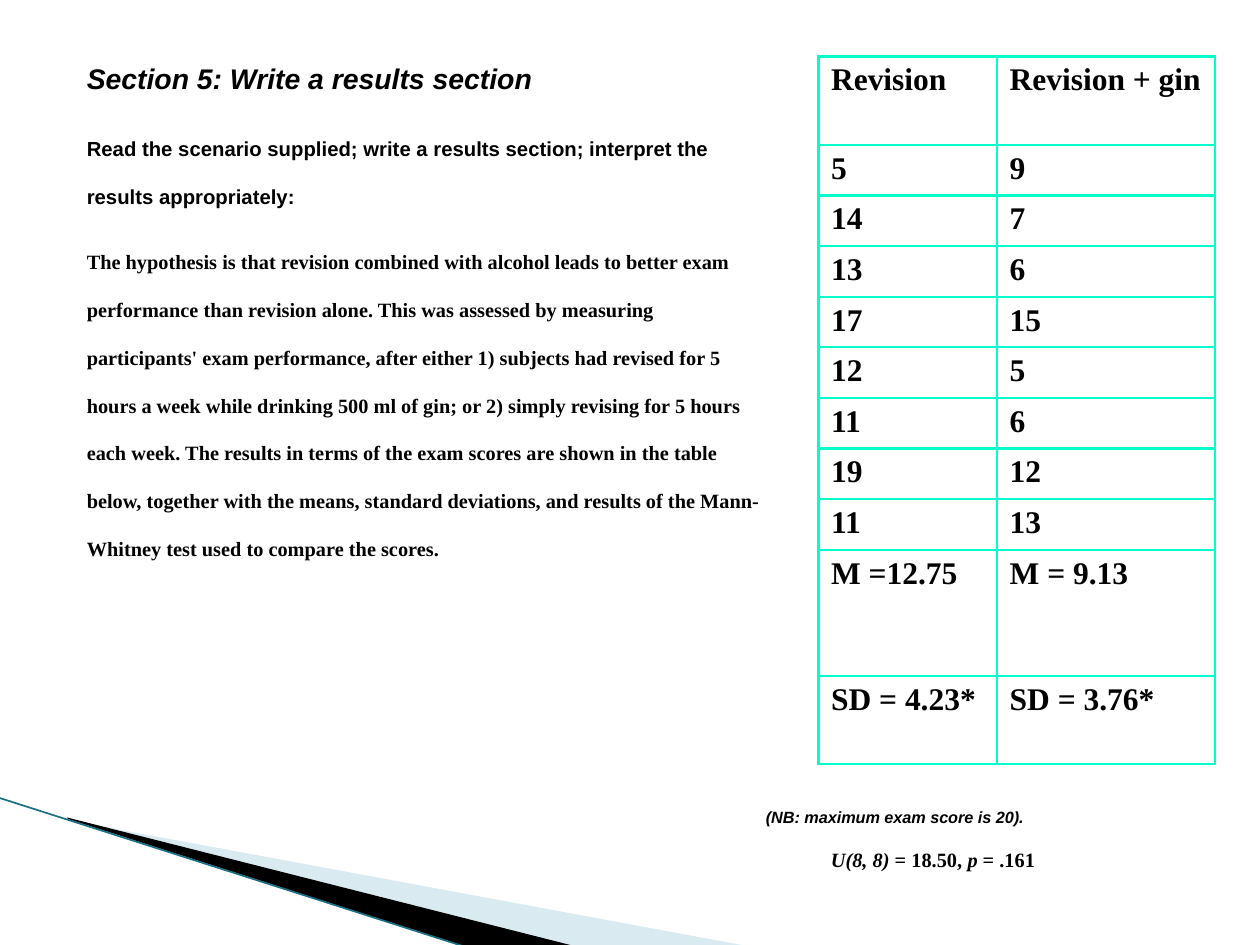
from dataclasses import dataclass

from lxml import etree
from pptx import Presentation
from pptx import util as u
from pptx.dml.color import RGBColor
from pptx.enum import shapes, text
from pptx.oxml import ns

COLOURS = {
    "ink": "000000",
    "grid": "00FFCC",
    "pale": "A0CBDC",
    "edge": "186F84",
}
LOWERED = "-25000"


@dataclass(frozen=True)
class Span:
    words: str
    size: int
    face: str
    italic: bool = False
    baseline: str = LOWERED


@dataclass(frozen=True)
class Passage:
    left: float
    top: float
    width: float
    height: float
    paragraphs: tuple[tuple[Span, ...], ...]


@dataclass(frozen=True)
class Wedge:
    points: tuple[tuple[float, float], ...]
    colour: str
    opacity: int = 100


WEDGES = (
    Wedge(((1.4, 16.54), (15.11, 19.08), (11.58, 19.08), (1.4, 16.51)), "pale", 40),
    Wedge(((1.35, 16.48), (11.61, 19.08), (9.45, 19.1), (1.37, 16.51)), "ink"),
)

HYPOTHESIS = (
    "The hypothesis is that revision combined with alcohol leads to better exam "
    "performance than revision alone. This was assessed by measuring participants' "
    "exam performance, after either 1) subjects had revised for 5 hours a week while "
    "drinking 500 ml of gin; or 2) simply revising for 5 hours each week. The results "
    "in terms of the exam scores are shown in the table below, together with the means, "
    "standard deviations, and results of the Mann-Whitney test used to compare the scores."
)
INSTRUCTION = (
    "Read the scenario supplied; write a results section; "
    "interpret the results appropriately:"
)
SERIF = "Times New Roman"
PASSAGES = (
    Passage(1.5, 0.45, 14.2, 16.33, (
        (Span("Section 5: Write a results section", 28, "Arial", True),),
        (Span(INSTRUCTION, 20, "Arial"),),
        (Span(HYPOTHESIS, 20, SERIF),),
    )),
    Passage(15.19, 15.77, 10.21, 0.94, (
        (Span("(NB: maximum exam score is 20).", 16, "Arial", True),),
    )),
    Passage(16.5, 16.48, 8.2, 2.39, (
        (
            Span("U(8, 8)", 20, SERIF, True),
            Span(" = 18.50, ", 20, SERIF),
            Span("p", 20, SERIF, True),
            Span(" = .161", 20, SERIF),
        ),
    )),
)

SCORES = (
    ("Revision", "Revision + gin"),
    ("5", "9"),
    ("14", "7"),
    ("13", "6"),
    ("17", "15"),
    ("12", "5"),
    ("11", "6"),
    ("19", "12"),
    ("11", "13"),
    ("M =12.75", "M = 9.13"),
    ("SD = 4.23*", "SD = 3.76*"),
)
COLUMN_WIDTHS = (3.6, 4.4)
ROW_HEIGHTS = (1.78, *[1.02] * 8, 2.54, 1.78)


def rgb(name: str) -> RGBColor:
    return RGBColor.from_string(COLOURS[name])


def write_span(paragraph, span: Span) -> None:
    run = paragraph.add_run()
    run.text = span.words
    formats = {
        "size": u.Pt(span.size),
        "name": span.face,
        "bold": True,
        "italic": span.italic,
    }
    for attribute, value in formats.items():
        setattr(run.font, attribute, value)
    run.font.color.rgb = rgb("ink")
    if span.baseline:
        run._r.get_or_add_rPr().set("baseline", span.baseline)


def draw_wedge(slide, wedge: Wedge) -> None:
    corners = [(u.Cm(x), u.Cm(y)) for x, y in wedge.points]
    builder = slide.shapes.build_freeform(*corners[0])
    builder.add_line_segments(corners[1:], close=True)
    sweep = builder.convert_to_shape()
    sweep.shadow.inherit = False
    sweep.line.fill.background()
    sweep.fill.solid()
    sweep.fill.fore_color.rgb = rgb(wedge.colour)
    if wedge.opacity < 100:
        tint = sweep._element.spPr.find(".//" + ns.qn("a:srgbClr"))
        etree.SubElement(tint, ns.qn("a:alpha")).set("val", str(wedge.opacity * 1000))


def draw_edge(slide) -> None:
    edge = slide.shapes.add_connector(
        shapes.MSO_CONNECTOR.STRAIGHT, u.Cm(-0.03), u.Cm(16.08), u.Cm(9.42), u.Cm(19.1)
    )
    edge.line.color.rgb = rgb("edge")
    edge.line.width = u.Pt(0.95)
    etree.SubElement(edge._element.spPr, ns.qn("a:effectLst"))


def draw_passage(slide, passage: Passage) -> None:
    bounds = (passage.left, passage.top, passage.width, passage.height)
    frame = slide.shapes.add_textbox(*map(u.Cm, bounds)).text_frame
    frame.word_wrap = True
    frame.auto_size = text.MSO_AUTO_SIZE.SHAPE_TO_FIT_TEXT
    for index, spans in enumerate(passage.paragraphs):
        paragraph = frame.add_paragraph() if index else frame.paragraphs[0]
        if index:
            paragraph.space_before = u.Pt(10)
        for span in spans:
            write_span(paragraph, span)


def outline_cell(cell) -> None:
    properties = cell._tc.get_or_add_tcPr()
    for position, side in enumerate(("lnL", "lnR", "lnT", "lnB")):
        border = etree.Element(ns.qn(f"a:{side}"), w=str(u.Pt(1.5)))
        fill = etree.SubElement(border, ns.qn("a:solidFill"))
        etree.SubElement(fill, ns.qn("a:srgbClr"), val=COLOURS["grid"])
        properties.insert(position, border)


def draw_scores(slide) -> None:
    scores = slide.shapes.add_table(
        len(SCORES), len(COLUMN_WIDTHS), u.Cm(16.5), u.Cm(1.14),
        u.Cm(sum(COLUMN_WIDTHS)), u.Cm(sum(ROW_HEIGHTS)),
    ).table
    scores.first_row = scores.horz_banding = False
    for column, width in zip(scores.columns, COLUMN_WIDTHS):
        column.width = u.Cm(width)
    for row, height, entries in zip(scores.rows, ROW_HEIGHTS, SCORES):
        row.height = u.Cm(height)
        for cell, entry in zip(row.cells, entries):
            cell.fill.background()
            outline_cell(cell)
            write_span(
                cell.text_frame.paragraphs[0], Span(entry, 18, SERIF, baseline="")
            )


def main() -> None:
    deck = Presentation()
    deck.slide_width, deck.slide_height = u.Cm(25.4), u.Cm(19.05)
    slide = deck.slides.add_slide(deck.slide_layouts[6])
    for wedge in WEDGES:
        draw_wedge(slide, wedge)
    draw_edge(slide)
    body, *notes = PASSAGES
    draw_passage(slide, body)
    draw_scores(slide)
    for note in notes:
        draw_passage(slide, note)
    deck.save("out.pptx")


if __name__ == "__main__":
    main()
